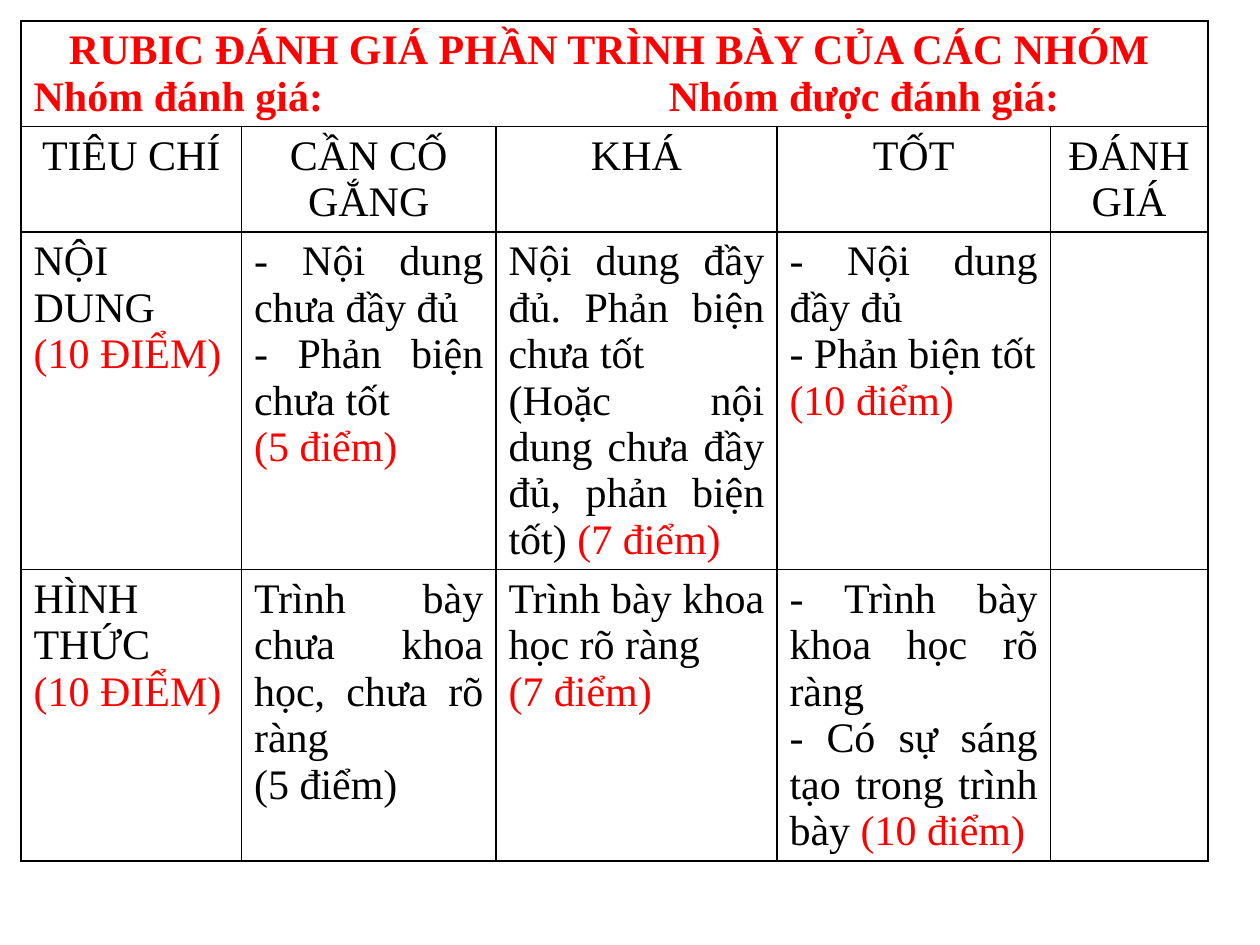
from dataclasses import dataclass

from lxml.etree import SubElement
from pptx import Presentation
from pptx.dml.color import RGBColor
from pptx.enum.text import PP_ALIGN
from pptx.oxml.ns import qn
from pptx.table import _Cell
from pptx.util import Pt

COLORS = {"text": "000000", "accent": "FF0000", "border": "000000", "cell": "FFFFFF"}
FONT_NAME = "Times New Roman"
FONT_SIZE = Pt(24)
COLUMN_WIDTHS = [126, 145.44, 160.56, 156.24, 90]
ROW_HEIGHTS = [50.4, 46.8, 127.44, 147.6]
SECOND_LABEL_TAB = Pt(363)


@dataclass
class Line:
    """One paragraph: plain words followed by optional highlighted words."""

    plain: str = ""
    accent: str = ""
    alignment: PP_ALIGN = PP_ALIGN.JUSTIFY
    bold: bool = False


TITLE = [
    Line(accent="RUBIC ĐÁNH GIÁ PHẦN TRÌNH BÀY CỦA CÁC NHÓM ", alignment=PP_ALIGN.CENTER, bold=True),
    Line(accent="Nhóm đánh giá:\tNhóm được đánh giá:", alignment=PP_ALIGN.LEFT, bold=True),
]
HEADINGS = ["TIÊU CHÍ", "CẦN CỐ GẮNG", "KHÁ", "TỐT", "ĐÁNH GIÁ"]
CRITERIA = [
    [
        [Line("NỘI DUNG"), Line(accent="(10 ĐIỂM)")],
        [Line("- Nội dung chưa đầy đủ"), Line("- Phản biện chưa tốt"), Line(accent="(5 điểm)")],
        [
            Line("Nội dung đầy đủ. Phản biện chưa tốt"),
            Line("(Hoặc nội dung chưa đầy đủ, phản biện tốt) ", "(7 điểm)"),
        ],
        [Line("- Nội dung đầy đủ"), Line("- Phản biện tốt"), Line(accent="(10 điểm)")],
        [],
    ],
    [
        [Line("HÌNH THỨC"), Line(accent="(10 ĐIỂM)")],
        [Line("Trình bày chưa khoa học, chưa rõ ràng"), Line("(5 điểm)")],
        [Line("Trình bày khoa học rõ ràng"), Line(accent="(7 điểm)")],
        [
            Line("- Trình bày khoa học rõ ràng"),
            Line("- Có sự sáng tạo trong trình bày ", "(10 điểm)"),
        ],
        [],
    ],
]


def write_lines(cell: _Cell, lines: list[Line]) -> None:
    """Fill a cell with formatted paragraphs."""
    cell.text_frame.text = "\n".join(line.plain for line in lines)
    for paragraph, line in zip(cell.text_frame.paragraphs, lines):
        paragraph.alignment = line.alignment
        colors = ["text"] if line.plain else []
        if line.accent:
            paragraph.add_run().text = line.accent
            colors.append("accent")
        for run, color in zip(paragraph.runs, colors):
            run.font.name = FONT_NAME
            run.font.size = FONT_SIZE
            run.font.bold = line.bold
            run.font.color.rgb = RGBColor.from_string(COLORS[color])


def style_cell(cell: _Cell) -> None:
    """Give a cell a plain fill and a thin border on all sides."""
    cell.fill.solid()
    cell.fill.fore_color.rgb = RGBColor.from_string(COLORS["cell"])
    properties = cell._tc.get_or_add_tcPr()
    for index, side in enumerate(("a:lnL", "a:lnR", "a:lnT", "a:lnB")):
        border = SubElement(properties, qn(side), w=str(Pt(1)))
        fill = SubElement(border, qn("a:solidFill"))
        SubElement(fill, qn("a:srgbClr"), val=COLORS["border"])
        properties.insert(index, border)


def main() -> None:
    """Build the presentation rubric slide."""
    presentation = Presentation()
    presentation.slide_width, presentation.slide_height = Pt(720), Pt(540)
    slide = presentation.slides.add_slide(presentation.slide_layouts[6])
    shape = slide.shapes.add_table(
        len(ROW_HEIGHTS), len(COLUMN_WIDTHS), Pt(12), Pt(12), Pt(sum(COLUMN_WIDTHS)), Pt(518.4)
    )
    table = shape.table
    for column, width in zip(table.columns, COLUMN_WIDTHS):
        column.width = Pt(width)
    for row, height in zip(table.rows, ROW_HEIGHTS):
        row.height = Pt(height)
    for cell in table.iter_cells():
        style_cell(cell)

    title_cell = table.cell(0, 0)
    title_cell.merge(table.cell(0, len(COLUMN_WIDTHS) - 1))
    write_lines(title_cell, TITLE)
    label_properties = title_cell.text_frame.paragraphs[1]._p.get_or_add_pPr()
    tab_list = SubElement(label_properties, qn("a:tabLst"))
    SubElement(tab_list, qn("a:tab"), pos=str(SECOND_LABEL_TAB), algn="l")

    headings = [[Line(heading, alignment=PP_ALIGN.CENTER)] for heading in HEADINGS]
    for row_index, row_lines in enumerate([headings, *CRITERIA], start=1):
        for column_index, lines in enumerate(row_lines):
            write_lines(table.cell(row_index, column_index), lines)
    presentation.save("out.pptx")


if __name__ == "__main__":
    main()
